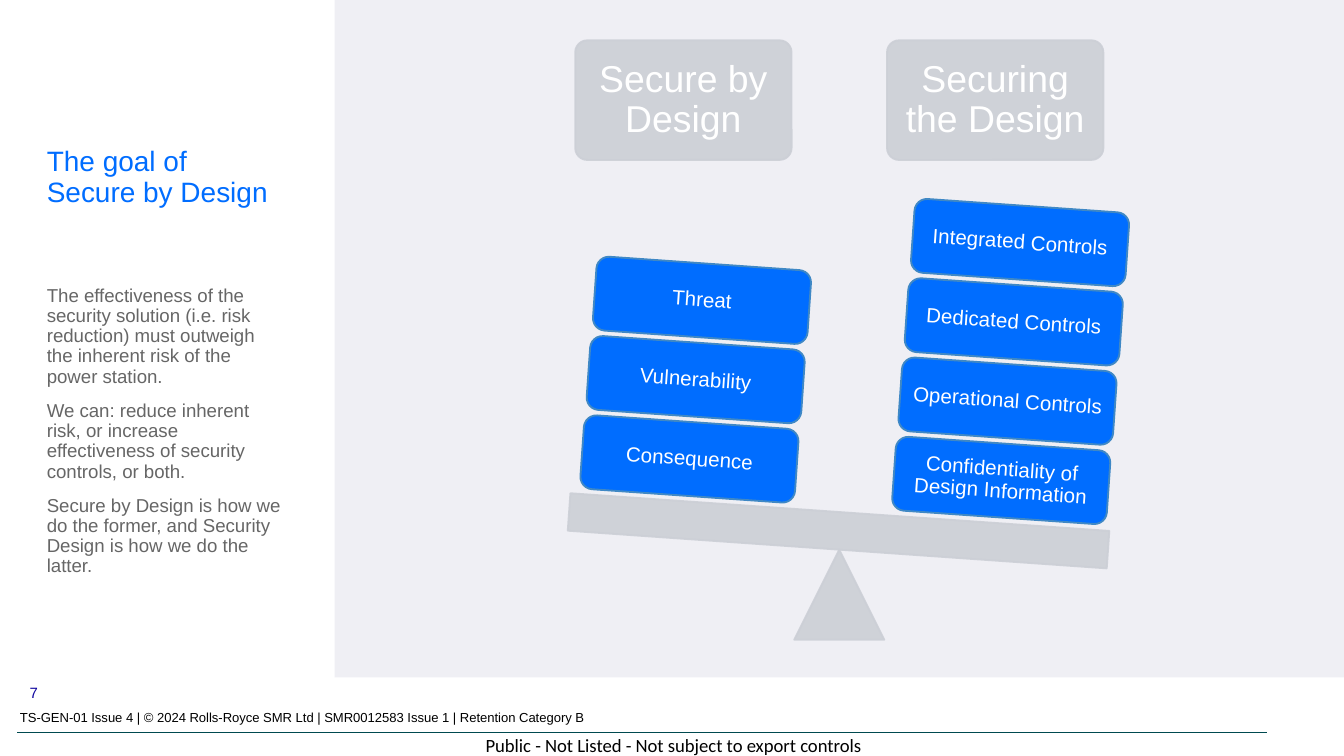
import pptx
import pptx.util
import pptx.dml.color
import pptx.enum.shapes
import pptx.enum.text
import pptx.oxml
import pptx.oxml.ns
from pptx.util import Inches

KIND = pptx.enum.shapes.MSO_SHAPE
ALIGN = pptx.enum.text.PP_ALIGN
ANCHOR = pptx.enum.text.MSO_ANCHOR
BLUE, GREY, WHITE = "006DFF", "CCCFD6", "FFFFFF"


def color(code):
    """Turn a hex string into a colour."""
    return pptx.dml.color.RGBColor.from_string(code)


def write(shape, text, size=10, font="Arial", ink="000000", align=ALIGN.LEFT,
          anchor=ANCHOR.TOP, inset=(0.1, 0.05), lead=1.0, gap=0, wrap=True):
    """Fill a shape with formatted text, one paragraph per line."""
    frame = shape.text_frame
    frame.word_wrap = wrap
    frame.vertical_anchor = anchor
    frame.margin_left = frame.margin_right = Inches(inset[0])
    frame.margin_top = frame.margin_bottom = Inches(inset[1])
    for num, line in enumerate(text.split("\n")):
        para = frame.add_paragraph() if num else frame.paragraphs[0]
        para.text = line
        para.alignment = align
        para.line_spacing = lead
        para.space_before = pptx.util.Pt(gap if num else 0)
        para.font.size = pptx.util.Pt(size)
        para.font.name = font
        para.font.color.rgb = color(ink)


def label(slide, box, text, **style):
    """Add a text box."""
    write(slide.shapes.add_textbox(*map(Inches, box)), text, **style)


def fade(shape, share):
    """Make the fill and line of a shape partly transparent."""
    for node in shape._element.spPr.iter(pptx.oxml.ns.qn("a:srgbClr")):
        alpha = pptx.oxml.parse_xml(
            f'<a:alpha {pptx.oxml.ns.nsdecls("a")} val="{share * 1000}"/>')
        node.append(alpha)


def draw(slide, kind, box, fill, edge=None, turn=0, share=100):
    """Add a preset shape."""
    shape = slide.shapes.add_shape(kind, *map(Inches, box))
    shape.shadow.inherit = False
    shape.rotation = turn
    shape.fill.solid()
    shape.fill.fore_color.rgb = color(fill)
    if edge:
        shape.line.color.rgb = color(edge)
        shape.line.width = pptx.util.Pt(1)
    else:
        shape.line.fill.background()
    if share < 100:
        fade(shape, share)
    return shape


def stack(slide, left, base, names, tilt):
    """Pile tilted blocks upward from the left and top of the lowest one."""
    for num, name in enumerate(names):
        box = (left + 0.14 / 3 * num, base - 0.59 * num, 1.6, 0.55)
        block = draw(slide, KIND.ROUNDED_RECTANGLE, box, BLUE, "3F88C5", tilt)
        write(block, name, size=11, ink=WHITE, align=ALIGN.CENTER,
              anchor=ANCHOR.MIDDLE, inset=(0.05, 0.05), lead=0.9)


def scale(slide, left, top):
    """Draw the tilted balance with its heads and blocks."""
    tilt = 4
    for shift, name in ((0.05, "Secure by Design"), (2.37, "Securing the Design")):
        head = draw(slide, KIND.ROUNDED_RECTANGLE, (left + shift, top, 1.61, 0.89),
                    GREY, GREY, share=90)
        head.adjustments[0] = 0.1
        write(head, name, size=20, ink=WHITE, align=ALIGN.CENTER,
              anchor=ANCHOR.MIDDLE, inset=(0.08, 0.08), lead=0.9)
    draw(slide, KIND.ISOSCELES_TRIANGLE, (left + 1.68, top + 3.79, 0.67, 0.67),
         GREY, GREY, share=90)
    draw(slide, KIND.RECTANGLE, (left, top + 3.51, 4.02, 0.28), GREY, GREY, tilt, 90)
    stack(slide, left + 2.42, top + 3,
          ("Confidentiality of Design Information", "Operational Controls",
           "Dedicated Controls", "Integrated Controls"), tilt)
    stack(slide, left + 0.1, top + 2.84,
          ("Consequence", "Vulnerability", "Threat"), tilt)


def aside(slide, left, top, width):
    """Write the title and the message beside the panel."""
    label(slide, (left, top, width, 1.05), "The goal of Secure by Design",
          size=15, ink=BLUE, lead=0.9)
    label(slide, (left, top + 1.03, width, 2.31),
          "The effectiveness of the security solution (i.e. risk reduction) must "
          "outweigh the inherent risk of the power station.\n"
          "We can: reduce inherent risk, or increase effectiveness of security "
          "controls, or both.\n"
          "Secure by Design is how we do the former, and Security Design is how "
          "we do the latter.", ink="666666", lead=0.9, gap=7.5)


def footer(slide, top):
    """Write the page number, document line, rule and marking."""
    label(slide, (0, top, 0.38, 0.24), "7", size=8, ink="10069F", align=ALIGN.RIGHT)
    label(slide, (0.05, top + 0.19, 4.42, 0.22),
          "TS-GEN-01 Issue 4 | © 2024 Rolls-Royce SMR Ltd | SMR0012583 Issue 1 "
          "| Retention Category B", size=7, wrap=False)
    ends = (0.13, top + 0.41, 9.43, top + 0.41)
    rule = slide.shapes.add_connector(
        pptx.enum.shapes.MSO_CONNECTOR.STRAIGHT, *map(Inches, ends))
    rule.line.color.rgb = color("004A50")
    rule.line.width = pptx.util.Pt(0.5)
    rule._element.spPr.append(
        pptx.oxml.parse_xml(f'<a:effectLst {pptx.oxml.ns.nsdecls("a")}/>'))
    label(slide, (2.19, top + 0.42, 5.64, 0.17),
          "Public - Not Listed - Not subject to export controls",
          font="Calibri", align=ALIGN.CENTER, inset=(0, 0))


def main():
    """Build and save the slide."""
    deck = pptx.Presentation()
    deck.slide_width = Inches(10)
    deck.slide_height = deck.slide_width * 9 // 16
    slide = deck.slides.add_slide(deck.slide_layouts[6])
    footer(slide, 5.04)
    draw(slide, KIND.RECTANGLE, (2.49, 0, 7.51, 5.04), "EFEFF4")
    aside(slide, 0.25, 1.05, 1.95)
    scale(slide, 4.23, 0.3)
    deck.save("out.pptx")


if __name__ == "__main__":
    main()
